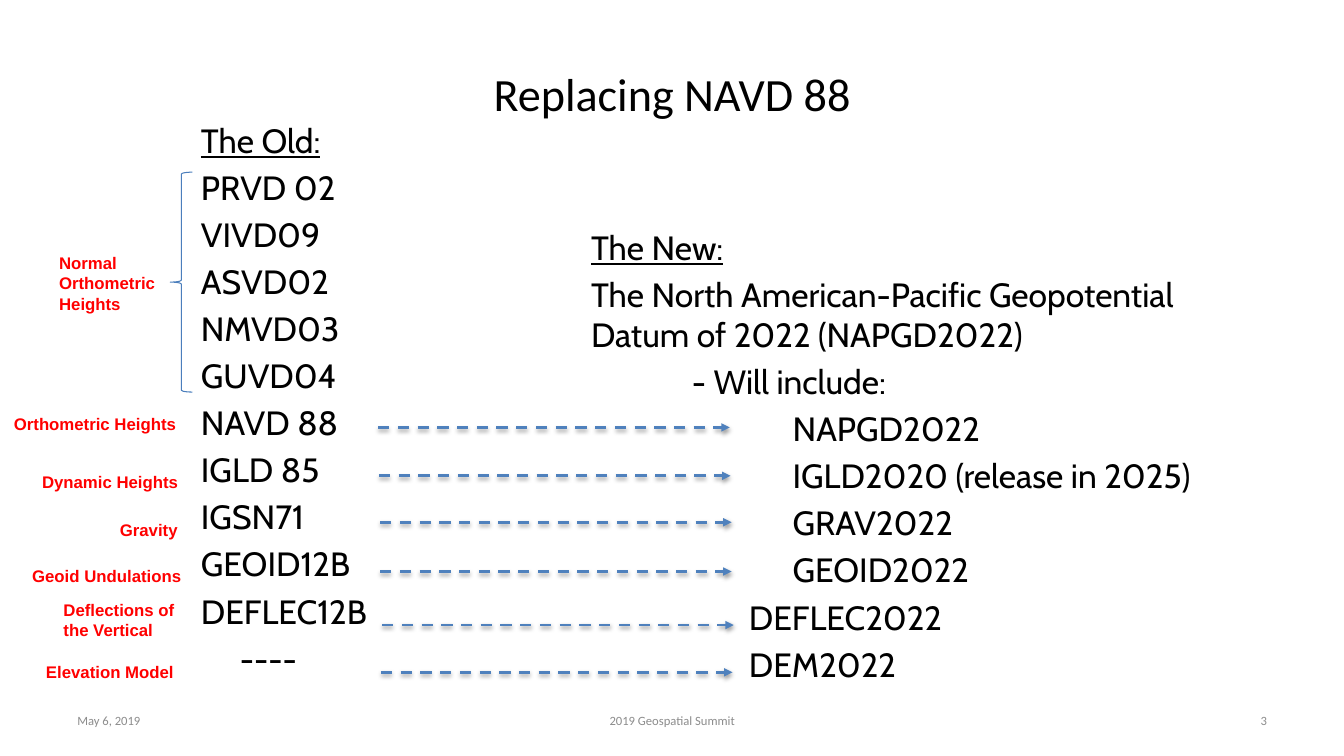
from lxml import etree
from pptx import Presentation
from pptx.dml.color import RGBColor
from pptx.enum.dml import MSO_LINE
from pptx.enum.shapes import MSO_CONNECTOR, MSO_SHAPE
from pptx.enum.text import MSO_ANCHOR, MSO_AUTO_SIZE, PP_ALIGN
from pptx.oxml import parse_xml
from pptx.oxml.ns import nsdecls, qn
from pptx.util import Cm, Pt

LEFT, CENTER, RIGHT = PP_ALIGN.LEFT, PP_ALIGN.CENTER, PP_ALIGN.RIGHT
TOP, MIDDLE = MSO_ANCHOR.TOP, MSO_ANCHOR.MIDDLE
DASH = MSO_LINE.DASH
STRAIGHT = MSO_CONNECTOR.STRAIGHT
LEFT_BRACE = MSO_SHAPE.LEFT_BRACE
NO_AUTOFIT = MSO_AUTO_SIZE.NONE

BLACK, RED, GREY = "000000", "FF0000", "8C8C8C"
BRACE_BLUE, ARROW_BLUE = "4B7EBC", "4F81BD"

# List lines: (text, left indent in cm)
BASE = 0.95
OLD_DATUMS = [(name, BASE) for name in (
    "The Old:", "PRVD 02", "VIVD09", "ASVD02", "NMVD03", "GUVD04", "NAVD 88",
    "IGLD 85", "IGSN71", "GEOID12B", "DEFLEC12B")] + [("----", 1.93)]
NEW_DATUMS = [
    ("The New:", BASE),
    ("The North American-Pacific Geopotential Datum of 2022 (NAPGD2022)", BASE),
    ("- Will include:", 3.49),
    ("NAPGD2022", 6.03),
    ("IGLD2020 (release in 2025)", 6.03),
    ("GRAV2022", 6.03),
    ("GEOID2022", 6.03),
    ("DEFLEC2022", 4.93),
    ("DEM2022", 4.93),
]

# Red labels: lines, (left, top, width, height) in cm
LABELS = [
    (["Normal", "Orthometric", "Heights"], (1.24, 6.25, 2.95, 1.8)),
    (["Orthometric Heights"], (0.1, 10.31, 4.67, 0.76)),
    (["Dynamic Heights"], (0.81, 11.76, 4.06, 0.76)),
    (["Gravity"], (2.77, 12.98, 1.98, 0.76)),
    (["Geoid Undulations"], (0.56, 14.12, 4.67, 0.76)),
    (["Deflections of", "the Vertical"], (1.35, 14.99, 3.35, 1.27)),
    (["Elevation Model"], (0.91, 16.54, 4.04, 0.76)),
]

# Arrow starts in cm
ARROWS = [(9.53, 10.77), (9.55, 11.99), (9.58, 13.16),
          (9.58, 14.4), (9.63, 15.75), (9.6, 16.94)]
ARROW_LENGTH = 8.86

FOOTERS = [
    ("May 6, 2019", LEFT, 1.7, 7.9),
    ("2019 Geospatial Summit", CENTER, 11.58, 10.72),
    ("3", RIGHT, 24.28, 7.9),
]


def rgb(value):
    return RGBColor.from_string(value)


def write(p, text, *, size, font, color=BLACK, bold=False, underline=False,
          align=LEFT):
    p.alignment = align
    r = p.add_run()
    r.text = text
    f = r.font
    f.size, f.name = Pt(size), font
    f.bold, f.underline = bold, underline
    f.color.rgb = rgb(color)


def paragraphs(tf, count):
    """Return the given number of paragraphs, starting with the existing one."""
    return [tf.paragraphs[0]] + [tf.add_paragraph() for _ in range(count - 1)]


def place(sp, left, top, width, height):
    sp.left, sp.top, sp.width, sp.height = map(Cm, (left, top, width, height))


def fill_title(sp, text):
    place(sp, 1.7, 0.76, 30.48, 3.18)
    tf = sp.text_frame
    tf.auto_size, tf.vertical_anchor = NO_AUTOFIT, MIDDLE
    write(tf.paragraphs[0], text, size=33, font="Calibri", align=CENTER)


def fill_list(sp, box, lines):
    """Write an unbulleted list whose first line is an underlined heading."""
    place(sp, *box)
    tf = sp.text_frame
    tf.word_wrap, tf.auto_size, tf.vertical_anchor = True, NO_AUTOFIT, TOP
    for i, (p, (text, indent)) in enumerate(zip(paragraphs(tf, len(lines)), lines)):
        p.level = 1
        pPr = p._p.get_or_add_pPr()
        pPr.set("marL", str(Cm(indent)))
        pPr.set("indent", "0")
        etree.SubElement(pPr, qn("a:buNone"))
        p.space_before = Pt(4.8 if i else 0)
        write(p, text, size=24, font="Cabin", underline=i == 0)


def add_textbox(s, box, lines, anchor=TOP, **fmt):
    tf = s.shapes.add_textbox(*map(Cm, box)).text_frame
    tf.word_wrap, tf.vertical_anchor = True, anchor
    tf.margin_right = 0 if fmt.get("align", LEFT) == LEFT else Cm(0.25)
    for p, text in zip(paragraphs(tf, len(lines)), lines):
        write(p, text, **fmt)


def add_brace(s, box):
    sp = s.shapes.add_shape(LEFT_BRACE, *map(Cm, box))
    sp.shadow.inherit = False
    sp.fill.background()
    sp.line.color.rgb = rgb(BRACE_BLUE)
    sp.line.width = Pt(0.75)


def add_arrow(s, x, y):
    """Add a dashed horizontal arrow with a soft shadow below it."""
    line = s.shapes.add_connector(STRAIGHT, Cm(x), Cm(y), Cm(x + ARROW_LENGTH), Cm(y))
    line.line.color.rgb = rgb(ARROW_BLUE)
    line.line.width = Pt(2)
    line.line.dash_style = DASH
    spPr = line._element.spPr
    etree.SubElement(spPr.find(qn("a:ln")), qn("a:tailEnd"), type="triangle")
    spPr.append(parse_xml(
        f'<a:effectLst {nsdecls("a")}>'
        f'<a:outerShdw blurRad="{Pt(3.1)}" dist="{Pt(1.6)}" dir="5400000" rotWithShape="0">'
        '<a:srgbClr val="000000"><a:alpha val="38000"/></a:srgbClr>'
        '</a:outerShdw></a:effectLst>'))


def main():
    prs = Presentation()
    prs.slide_width, prs.slide_height = Cm(33.87), Cm(19.05)
    s = prs.slides.add_slide(prs.slide_layouts.get_by_name("Two Content"))

    fill_title(s.shapes.title, "Replacing NAVD 88")
    fill_list(s.placeholders[1], (3.86, 2.9, 7.72, 14.76), OLD_DATUMS)
    fill_list(s.placeholders[2], (13.69, 5.59, 18.16, 10.26), NEW_DATUMS)

    for text, align, left, width in FOOTERS:
        add_textbox(s, (left, 17.65, width, 1.02), [text], anchor=MIDDLE,
                    size=9, font="Calibri", color=GREY, align=align)
    for lines, box in LABELS:
        add_textbox(s, box, lines, size=12, font="Arial", color=RED, bold=True)
    add_brace(s, (4.29, 4.34, 0.56, 5.54))
    for x, y in ARROWS:
        add_arrow(s, x, y)

    prs.save("out.pptx")


if __name__ == "__main__":
    main()
